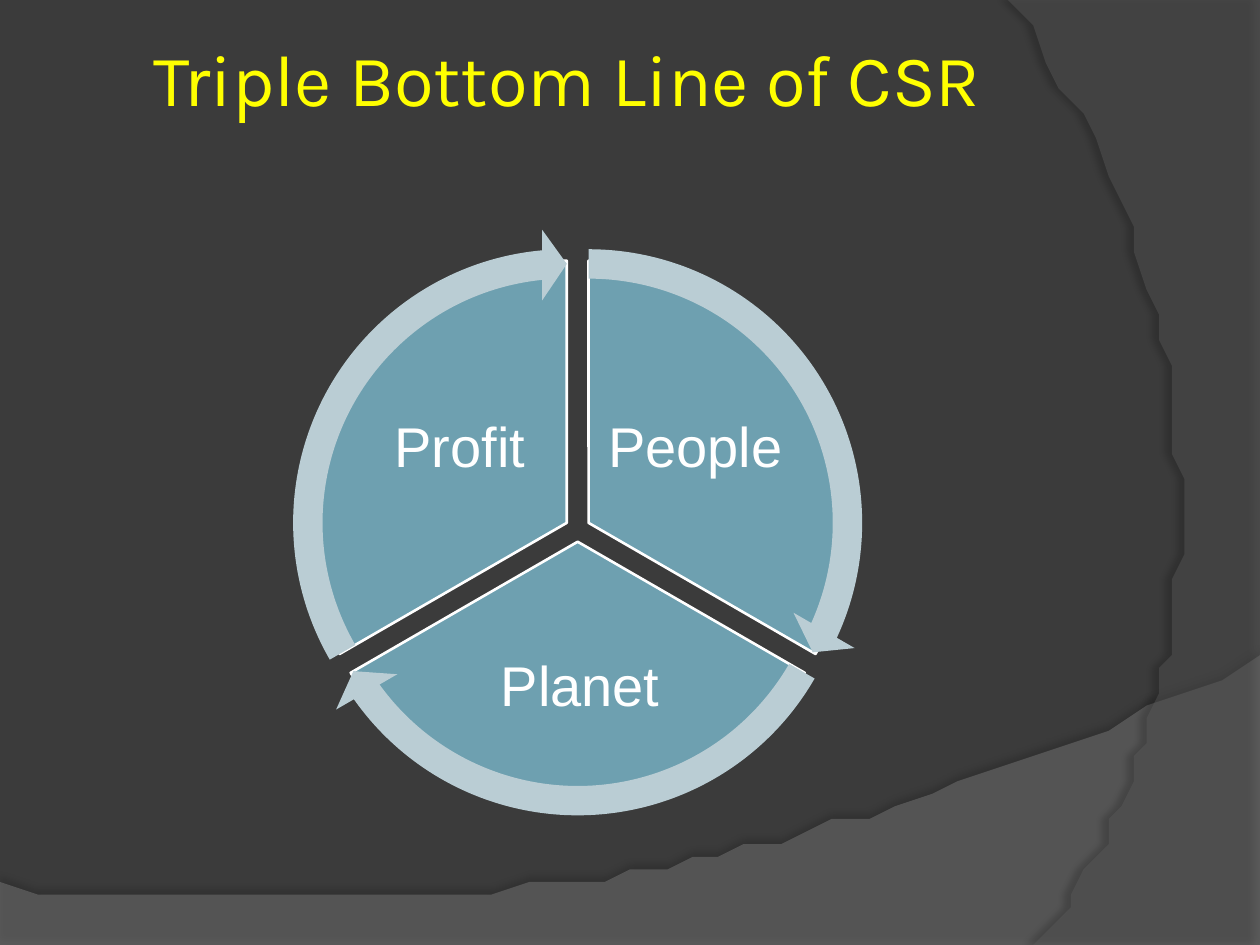
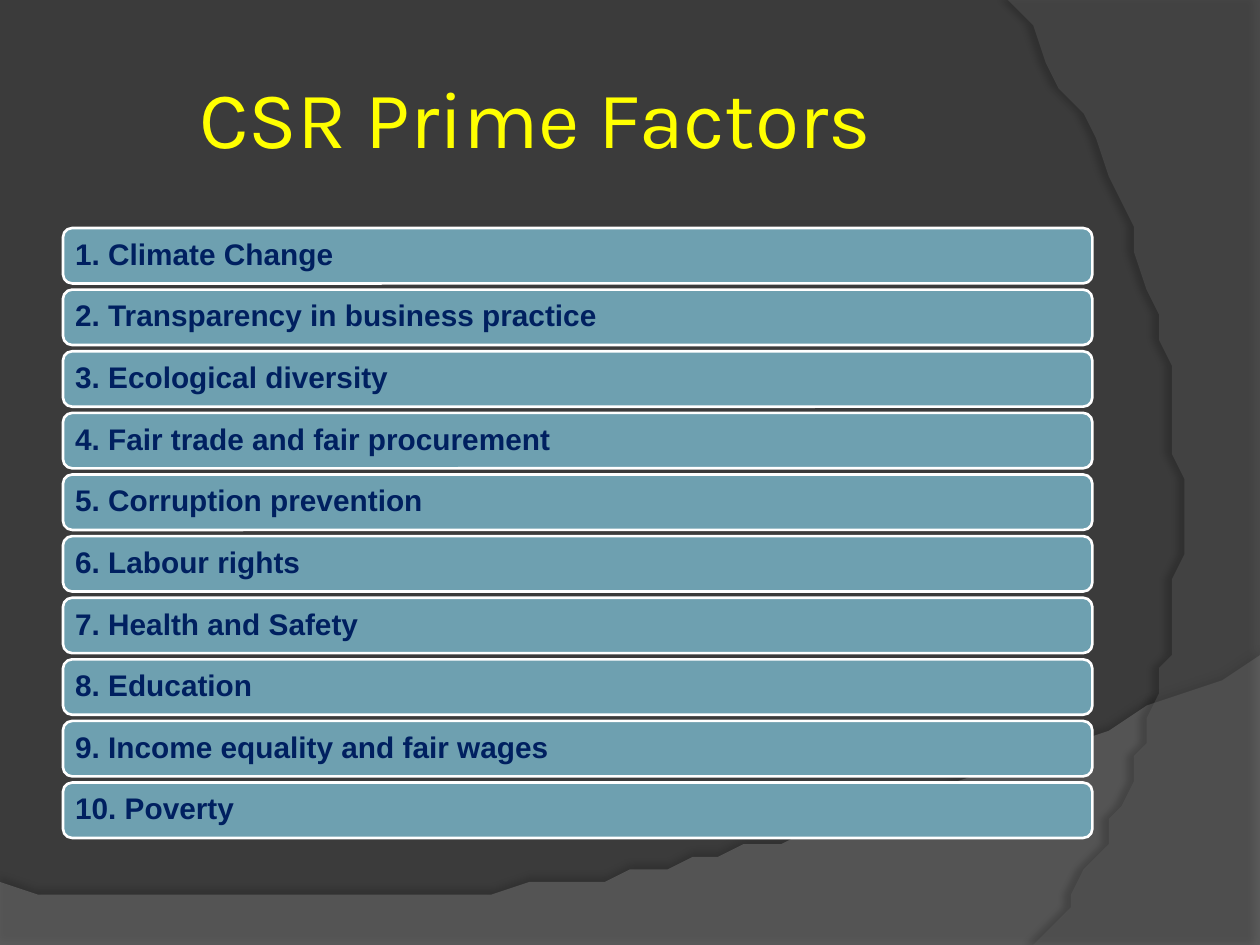
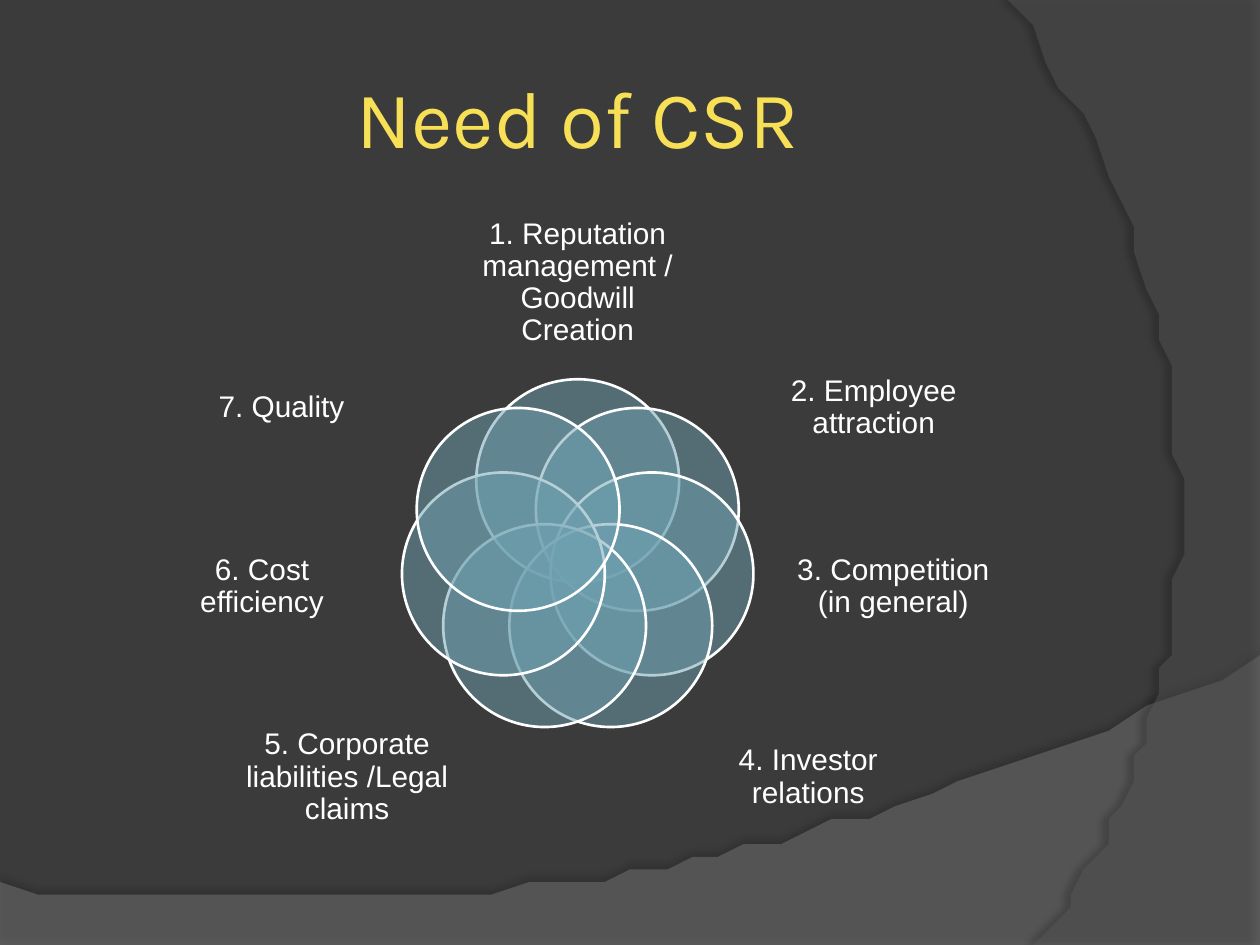
"""Three slides on corporate social responsibility."""
from dataclasses import dataclass
from math import cos, radians, sin
from typing import Any, NamedTuple

from lxml import etree
from pptx import Presentation
from pptx import util as u
from pptx.dml.color import RGBColor
from pptx.enum import shapes, text
from pptx.oxml.ns import qn

CELL = u.Inches(0.1)


@dataclass(frozen=True)
class Theme:
    """Colours, fonts and type sizes of the deck."""
    back: str = "3B3B3B"
    fill: str = "6EA0B0"
    pale: str = "BACDD4"
    white: str = "FFFFFF"
    navy: str = "002060"
    bright: str = "FFFF00"
    gold: str = "F7DF56"
    head: str = "Karla"
    body: str = "Arial"
    large: float = 46
    mid: float = 41.4
    label: float = 32
    small: float = 17
    edge: float = 1.5


THEME = Theme()


class Box(NamedTuple):
    """A frame in grid cells, 100 columns by 75 rows."""
    col: float
    row: float
    wide: float
    high: float

    def flip(self, axis: float) -> "Box":
        """Mirror the frame about a column."""
        return self._replace(col=2 * axis - self.col - self.wide)


class Band(NamedTuple):
    """A curved backdrop with a soft shadow."""
    start: tuple
    lines: list
    curve: list
    color: str
    alpha: int
    shade: int
    dist: float
    angle: int


class Head(NamedTuple):
    """A slide title and its padding in cells."""
    words: str
    color: str
    size: float
    right: float = 0.5
    foot: float = 0.5


class Part(NamedTuple):
    """A sector of the wheel."""
    name: str
    turn: float
    start: float
    stop: float
    tip: float
    spot: Box


FRAME = Box(5, 3, 81.7, 12.5)
MID = 45.85
TURN = 72
BANDS = [
    Band((0, 70.5), [(0, 75), (100, 75), (100, 52)],
         [(55.9, 72.9), (39.1, 71.9), (0, 70.5)], "7F7F7F", 45, 35, 3.5, 270),
    Band((100, 0.2), [(100, 75), (82.1, 75)],
         [(93.5, 61.9), (101.8, 30), (80, 0)], "5E5E5E", 40, 45, 4, 180),
]
PEOPLE = Box(47.8, 29.5, 14.8, 12.4)
PARTS = [
    Part("People", -30, 162, 18, 14.73, PEOPLE),
    Part("Planet", 90, 18, 90, 14.73 + TURN, Box(34.9, 49.2, 22.3, 10.9)),
    Part("Profit", 210, 90, 162, 14.73 + 2 * TURN, PEOPLE.flip(MID)),
]
FACTORS = [
    "Climate Change", "Transparency in business practice",
    "Ecological diversity", "Fair trade and fair procurement",
    "Corruption prevention", "Labour rights", "Health and Safety",
    "Education", "Income equality and fair wages", "Poverty",
]
NEEDS = [
    "Reputation management / Goodwill Creation", "Employee attraction",
    "Competition (in general)", "Investor relations",
    "Corporate liabilities /Legal claims", "Cost efficiency", "Quality",
]
SPOTS = [Box(36.6, 17.5, 18.5, 9.9), Box(60.6, 26.9, 17.5, 10.9),
         Box(62.3, 40.8, 17.2, 11.6), Box(54.9, 56.4, 18.5, 10.6)]


def put(item: Any, vals: dict) -> None:
    """Set each value as an attribute."""
    for key, val in vals.items():
        setattr(item, key, val)


def place(box: Box) -> list:
    """Turn a frame into slide lengths."""
    return [u.Emu(round(n * CELL)) for n in box]


def around(col: float, row: float, size: float) -> Box:
    """Make a square frame about a point."""
    return Box(col - size / 2, row - size / 2, size, size)


def write(shape: Any, words: str, size: float, color: str, font: str = THEME.body,
          bold: bool = False, align: Any = text.PP_ALIGN.CENTER,
          pads: tuple = (0, 0, 0, 0), space: float = 0.9) -> None:
    """Fill a shape with one styled paragraph."""
    frame = shape.text_frame
    sides = ("left", "top", "right", "bottom")
    put(frame, {"text": words, "word_wrap": True,
                "auto_size": text.MSO_AUTO_SIZE.NONE,
                "vertical_anchor": text.MSO_ANCHOR.MIDDLE,
                **{f"margin_{s}": round(n * CELL) for s, n in zip(sides, pads)}})
    para = frame.paragraphs[0]
    put(para, {"alignment": align, "line_spacing": space})
    run = para.runs[0].font
    put(run, {"name": font, "size": u.Pt(size), "bold": bold})
    run.color.rgb = RGBColor.from_string(color)


def paint(shape: Any, color: str, edge: bool = True, alpha: int = 100) -> Any:
    """Set fill, outline and opacity, and drop the shadow."""
    shape.shadow.inherit = False
    shape.fill.solid()
    shape.fill.fore_color.rgb = RGBColor.from_string(color)
    if alpha < 100:
        tint = shape.element.spPr.find(".//" + qn("a:srgbClr"))
        etree.SubElement(tint, qn("a:alpha"), val=str(alpha * 1000))
    if edge:
        shape.line.color.rgb = RGBColor.from_string(THEME.white)
        shape.line.width = u.Pt(THEME.edge)
    else:
        shape.line.fill.background()
    return shape


def draw(slide: Any, kind: Any, box: Box, color: str = THEME.fill,
         turns: tuple = (), **style: Any) -> Any:
    """Add a painted preset shape."""
    shape = slide.shapes.add_shape(kind, *place(box))
    for i, val in enumerate(turns):
        shape.adjustments[i] = val
    return paint(shape, color, **style)


def label(slide: Any, box: Box, words: str, size: float, pad: float = 0) -> None:
    """Add a centred white label."""
    write(slide.shapes.add_textbox(*place(box)), words, size, THEME.white,
          pads=(pad,) * 4)


def bend(nodes: list, steps: int = 40) -> list:
    """Trace a cubic curve as points."""
    out = []
    for i in range(1, steps + 1):
        t = i / steps
        parts = ((1 - t) ** 3, 3 * t * (1 - t) ** 2, 3 * t * t * (1 - t), t ** 3)
        out.append(tuple(sum(w * n[k] for w, n in zip(parts, nodes))
                         for k in (0, 1)))
    return out


def back(deck: Any, slide: Any) -> None:
    """Give the master its colour and bands."""
    master = deck.slide_master
    master.background.fill.solid()
    master.background.fill.fore_color.rgb = RGBColor.from_string(THEME.back)
    for i, band in enumerate(BANDS):
        pen = slide.shapes.build_freeform(*band.start, scale=CELL)
        pen.add_line_segments(band.lines + bend([band.lines[-1]] + band.curve))
        shape = paint(pen.convert_to_shape(), band.color, edge=False,
                      alpha=band.alpha)
        glow = etree.SubElement(
            shape.element.spPr.find(qn("a:effectLst")), qn("a:outerShdw"),
            blurRad=str(u.Pt(4)), dist=str(u.Pt(band.dist)),
            dir=str(band.angle * 60000), algn="ctr", rotWithShape="0")
        tint = etree.SubElement(glow, qn("a:srgbClr"), val="000000")
        etree.SubElement(tint, qn("a:alpha"), val=str(band.shade * 1000))
        master.shapes.element.insert(2 + i, shape.element)


def start(deck: Any, head: Head) -> Any:
    """Add a slide with its title."""
    slide = deck.slides.add_slide(deck.slide_layouts[5])
    title = slide.shapes.title
    put(title, dict(zip(("left", "top", "width", "height"), place(FRAME))))
    write(title, head.words, head.size, head.color, THEME.head,
          pads=(0.5, 0.5, head.right, head.foot), space=1.0)
    return slide


def wheel(slide: Any) -> None:
    """Draw three sectors and the arrows round them."""
    kinds = shapes.MSO_SHAPE
    hubs = [(MID + cos(radians(p.turn)), 42 + sin(radians(p.turn)))
            for p in PARTS]
    for part, hub in zip(PARTS, hubs):
        draw(slide, kinds.PIE, around(*hub, 41.6), turns=(part.start, part.stop))
        label(slide, part.spot, part.name, THEME.label, 0.4)
    for part, hub in zip(PARTS, hubs):
        draw(slide, kinds.CIRCULAR_ARROW, around(*hub, 46.7), THEME.pale,
             (0.05, 3.28, part.tip, part.start, 0.06), edge=False)


def bars(slide: Any) -> None:
    """Stack the numbered factors."""
    for i, name in enumerate(FACTORS):
        bar = draw(slide, shapes.MSO_SHAPE.ROUNDED_RECTANGLE,
                   Box(FRAME.col, 18.1 + 4.89 * i, FRAME.wide, 4.4))
        write(bar, f"{i + 1}. {name}", THEME.small, THEME.navy, bold=True,
              align=text.PP_ALIGN.LEFT, pads=(0.75, 0.5, 0.75, 0.5))


def bloom(slide: Any) -> None:
    """Ring the needs round a flower of circles."""
    spots = SPOTS + [s.flip(MID) for s in reversed(SPOTS[1:])]
    for i, (name, spot) in enumerate(zip(NEEDS, spots)):
        turn = radians(360 * i / len(NEEDS) - 90)
        hub = MID + 6.05 * cos(turn), 44.2 + 6.05 * sin(turn)
        draw(slide, shapes.MSO_SHAPE.OVAL, around(*hub, 16.1), alpha=50)
        label(slide, spot, f"{i + 1}. {name}", THEME.small)


def main() -> None:
    """Build and save the deck."""
    deck = Presentation()
    put(deck, {"slide_width": 100 * CELL, "slide_height": 75 * CELL})
    pages = [
        (Head("Triple Bottom Line of CSR", THEME.bright, THEME.mid, 2.2, 6.7), wheel),
        (Head("CSR Prime Factors", THEME.bright, THEME.large, 7.3), bars),
        (Head("Need of CSR", THEME.gold, THEME.large), bloom),
    ]
    for i, (head, fill) in enumerate(pages):
        slide = start(deck, head)
        if i == 0:
            back(deck, slide)
        fill(slide)
    deck.save("out.pptx")


if __name__ == "__main__":
    main()
